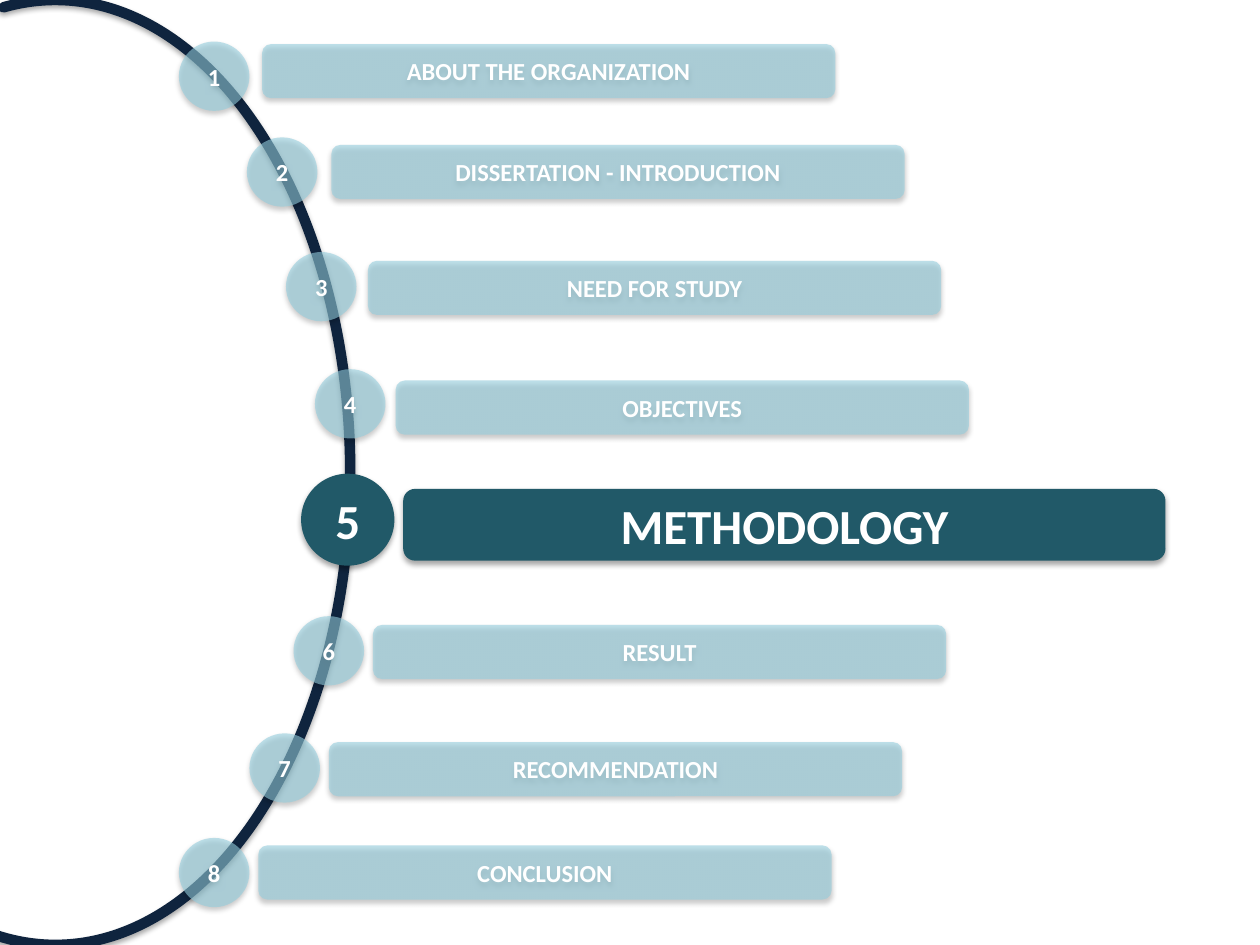
import pptx
import pptx.util
import pptx.dml.color
import pptx.enum.shapes
import pptx.enum.text
import pptx.oxml
import pptx.oxml.ns

Inches = pptx.util.Inches
RGBColor = pptx.dml.color.RGBColor
SHAPES = pptx.enum.shapes.MSO_SHAPE

NAVY = RGBColor(0x0F, 0x24, 0x3E)
PALE_BLUE = RGBColor(0x93, 0xCD, 0xDD)
TEAL = RGBColor(0x21, 0x59, 0x68)
WHITE = RGBColor(0xFF, 0xFF, 0xFF)

CURRENT_TOPIC = "METHODOLOGY"
TOPICS = [
    ("ABOUT THE ORGANIZATION", (1.42, 0.33), (2.08, 0.35)),
    ("DISSERTATION - INTRODUCTION", (1.96, 1.09), (2.63, 1.15)),
    ("NEED FOR STUDY", (2.27, 2.0), (2.92, 2.07)),
    ("OBJECTIVES", (2.5, 2.93), (3.14, 3.02)),
    (CURRENT_TOPIC, (2.39, 3.76), (3.2, 3.88)),
    ("RESULT", (2.33, 4.89), (2.96, 4.96)),
    ("RECOMMENDATION", (1.98, 5.82), (2.61, 5.89)),
    ("CONCLUSION", (1.42, 6.65), (2.05, 6.71)),
]

SHADOW_XML = (
    '<a:outerShdw {} blurRad="39370" dist="22860" dir="5400000" rotWithShape="0">'
    '<a:srgbClr val="000000"><a:alpha val="35000"/></a:srgbClr></a:outerShdw>'
).format(pptx.oxml.ns.nsdecls("a"))


def add_soft_shadow(shape):
    shape.shadow.inherit = False
    effects = shape._element.spPr.find(pptx.oxml.ns.qn("a:effectLst"))
    effects.append(pptx.oxml.parse_xml(SHADOW_XML))


def set_opacity(shape, percent):
    color = shape._element.spPr.find(".//" + pptx.oxml.ns.qn("a:srgbClr"))
    alpha = color.makeelement(pptx.oxml.ns.qn("a:alpha"), {"val": str(percent * 1000)})
    color.append(alpha)


def add_arc(slide):
    arc = slide.shapes.add_shape(
        SHAPES.BLOCK_ARC, Inches(-1.9), Inches(0), Inches(4.68), Inches(7.5))
    for index, value in enumerate((158.17, 58.48, 0)):
        arc.adjustments[index] = value
    arc.fill.solid()
    arc.fill.fore_color.rgb = NAVY
    arc.line.color.rgb = NAVY
    arc.line.width = pptx.util.Pt(6)
    add_soft_shadow(arc)


def add_label(slide, preset, position, size, text, is_current):
    label = slide.shapes.add_shape(
        preset, *(Inches(length) for length in position + size))
    label.fill.solid()
    label.fill.fore_color.rgb = TEAL if is_current else PALE_BLUE
    if not is_current:
        set_opacity(label, 59)
    label.line.fill.background()
    add_soft_shadow(label)
    frame = label.text_frame
    frame.text = text
    frame.word_wrap = True
    frame.vertical_anchor = pptx.enum.text.MSO_ANCHOR.MIDDLE
    paragraph = frame.paragraphs[0]
    paragraph.alignment = pptx.enum.text.PP_ALIGN.CENTER
    font = paragraph.runs[0].font
    font.name = "Calibri"
    font.size = pptx.util.Pt(28 if is_current else 14)
    font.bold = True
    font.color.rgb = WHITE


def add_topic(slide, number, topic, badge_position, bar_position):
    is_current = topic == CURRENT_TOPIC
    badge_size = (0.74, 0.73) if is_current else (0.56, 0.55)
    bar_size = (6.05, 0.57) if is_current else (4.55, 0.43)
    add_label(slide, SHAPES.OVAL, badge_position, badge_size, str(number), is_current)
    add_label(slide, SHAPES.ROUNDED_RECTANGLE, bar_position, bar_size, topic, is_current)


def main():
    """Build the agenda slide with the current topic highlighted on the arc."""
    presentation = pptx.Presentation()
    presentation.slide_width = Inches(10)
    presentation.slide_height = Inches(7.5)
    slide = presentation.slides.add_slide(presentation.slide_layouts[6])
    add_arc(slide)
    for number, (topic, badge_position, bar_position) in enumerate(TOPICS, start=1):
        add_topic(slide, number, topic, badge_position, bar_position)
    presentation.save("out.pptx")


if __name__ == "__main__":
    main()
